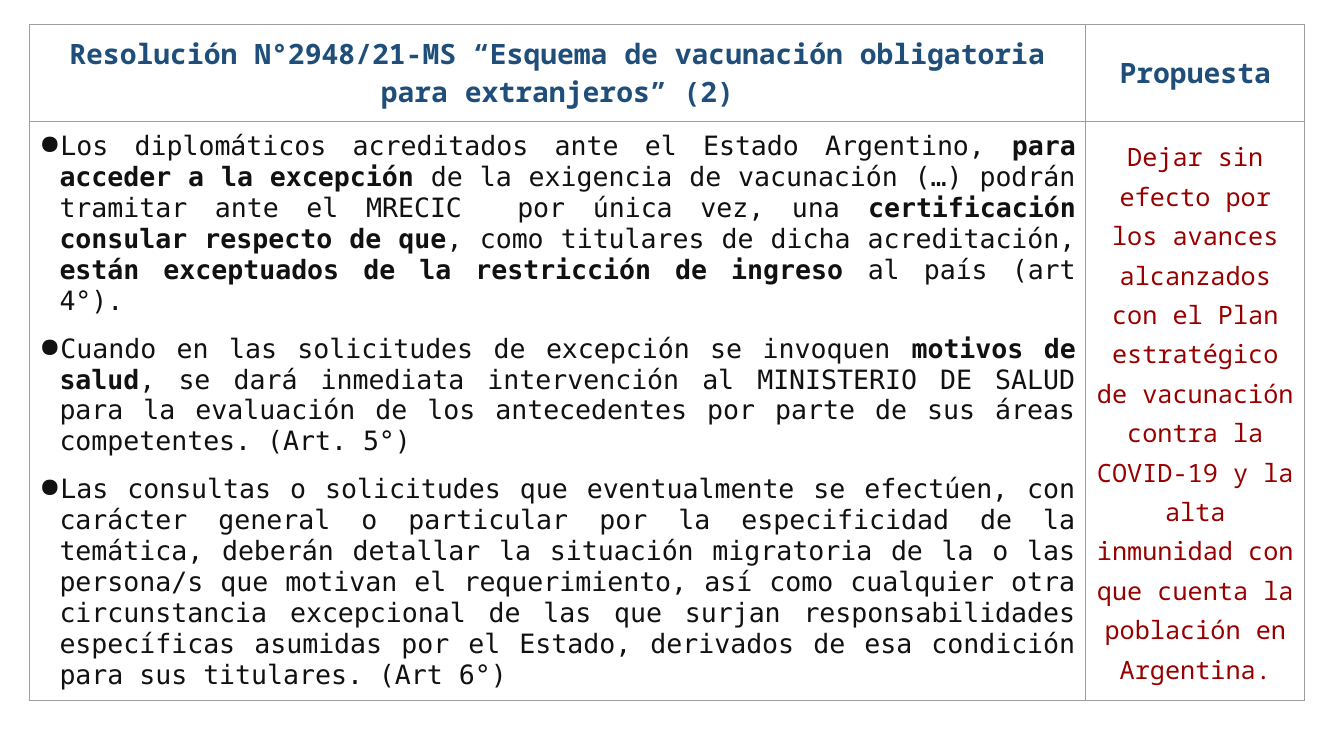
from lxml import etree
from pptx import Presentation
from pptx.dml.color import RGBColor
from pptx.enum.text import MSO_ANCHOR as Anchor, PP_ALIGN as Align
from pptx.oxml.ns import qn
from pptx.util import Inches, Pt

HEADING = {"name": "Noto Sans Mono", "size": Pt(20), "bold": True}
ARTICLE = {"name": "DejaVu Sans Mono", "size": Pt(19)}
PROPOSAL = {"name": "Noto Sans Mono", "size": Pt(18), "bold": False}
NAVY, INK, RED, GREY = "1E4E79", "111111", "980000", "9E9E9E"

COLUMNS = [10.48, 2.17]
ROWS = [0.88, 0.56, 4.84]

# Runs alternate between regular and bold, beginning with regular.
ARTICLES = [
    ["Los diplomáticos acreditados ante el Estado Argentino, ",
     "para acceder a la excepción ",
     "de la exigencia de vacunación (…) podrán tramitar ante el MRECIC  por única vez, una ",
     "certificación consular respecto de que",
     ", como titulares de dicha acreditación, ",
     "están exceptuados de la restricción de ingreso ",
     "al país (art 4°)."],
    ["Cuando en las solicitudes de excepción se invoquen ",
     "motivos de salud",
     ", se dará inmediata intervención al MINISTERIO DE SALUD para la evaluación "
     "de los antecedentes por parte de sus áreas competentes. (Art. 5°)"],
    ["Las consultas o solicitudes que eventualmente se efectúen, con carácter general "
     "o particular por la especificidad de la temática, deberán detallar la situación "
     "migratoria de la o las persona/s que motivan el requerimiento, así como cualquier "
     "otra circunstancia excepcional de las que surjan responsabilidades específicas "
     "asumidas por el Estado, derivados de esa condición para sus titulares. (Art 6°)"],
]


def add_span(para, text, style, color):
    span = para.add_run()
    span.text = text
    for name, value in style.items():
        setattr(span.font, name, value)
    span.font.color.rgb = RGBColor.from_string(color)


def add_color(parent, tag, color):
    """Append an element that holds one RGB colour."""
    holder = etree.SubElement(parent, qn(tag))
    etree.SubElement(holder, qn("a:srgbClr"), val=color)


deck = Presentation()
deck.slide_width, deck.slide_height = Inches(13.33), Inches(7.5)
page = deck.slides.add_slide(deck.slide_layouts[6])

frame = page.shapes.add_table(len(ROWS), len(COLUMNS), Inches(0.29), Inches(0.24),
                              Inches(sum(COLUMNS)), Inches(sum(ROWS)))
table = frame.table
table.first_row = table.horz_banding = False
for column, width in zip(table.columns, COLUMNS):
    column.width = Inches(width)
for row, height in zip(table.rows, ROWS):
    row.height = Inches(height)

for cell in table.iter_cells():
    cell.vertical_anchor = Anchor.MIDDLE
    for side in ("left", "right", "top", "bottom"):
        setattr(cell, f"margin_{side}", Inches(0.1))
        border = etree.SubElement(cell._tc.get_or_add_tcPr(),
                                  qn(f"a:ln{side[0].upper()}"), w=str(Pt(0.75)))
        add_color(border, "a:solidFill", GREY)
    cell.fill.background()

for index in range(len(COLUMNS)):
    table.cell(1, index).merge(table.cell(2, index))

headings = ["Resolución N°2948/21-MS “Esquema de vacunación obligatoria para extranjeros” (2)",
            "Propuesta"]
for index, heading in enumerate(headings):
    para = table.cell(0, index).text_frame.paragraphs[0]
    para.alignment = Align.CENTER
    add_span(para, heading, HEADING, NAVY)

body = table.cell(1, 0).text_frame
for number, article in enumerate(ARTICLES):
    para = body.add_paragraph() if number else body.paragraphs[0]
    properties = para._p.get_or_add_pPr()
    properties.set("marL", str(Inches(0.2)))
    properties.set("indent", str(-Inches(0.2)))
    add_color(properties, "a:buClr", INK)
    etree.SubElement(properties, qn("a:buChar"), char="●")
    para.alignment = Align.JUSTIFY
    para.space_before = Pt(6 if number else 0)
    para.space_after = Pt(6)
    for position, text in enumerate(article):
        add_span(para, text, {**ARTICLE, "bold": position % 2 == 1}, INK)

para = table.cell(1, 1).text_frame.paragraphs[0]
para.alignment = Align.CENTER
para.line_spacing = 1.15
add_span(para, "Dejar sin efecto por los avances alcanzados con el Plan estratégico de vacunación "
         "contra la COVID-19 y la alta inmunidad con que cuenta la población en Argentina.",
         PROPOSAL, RED)

deck.save("out.pptx")
